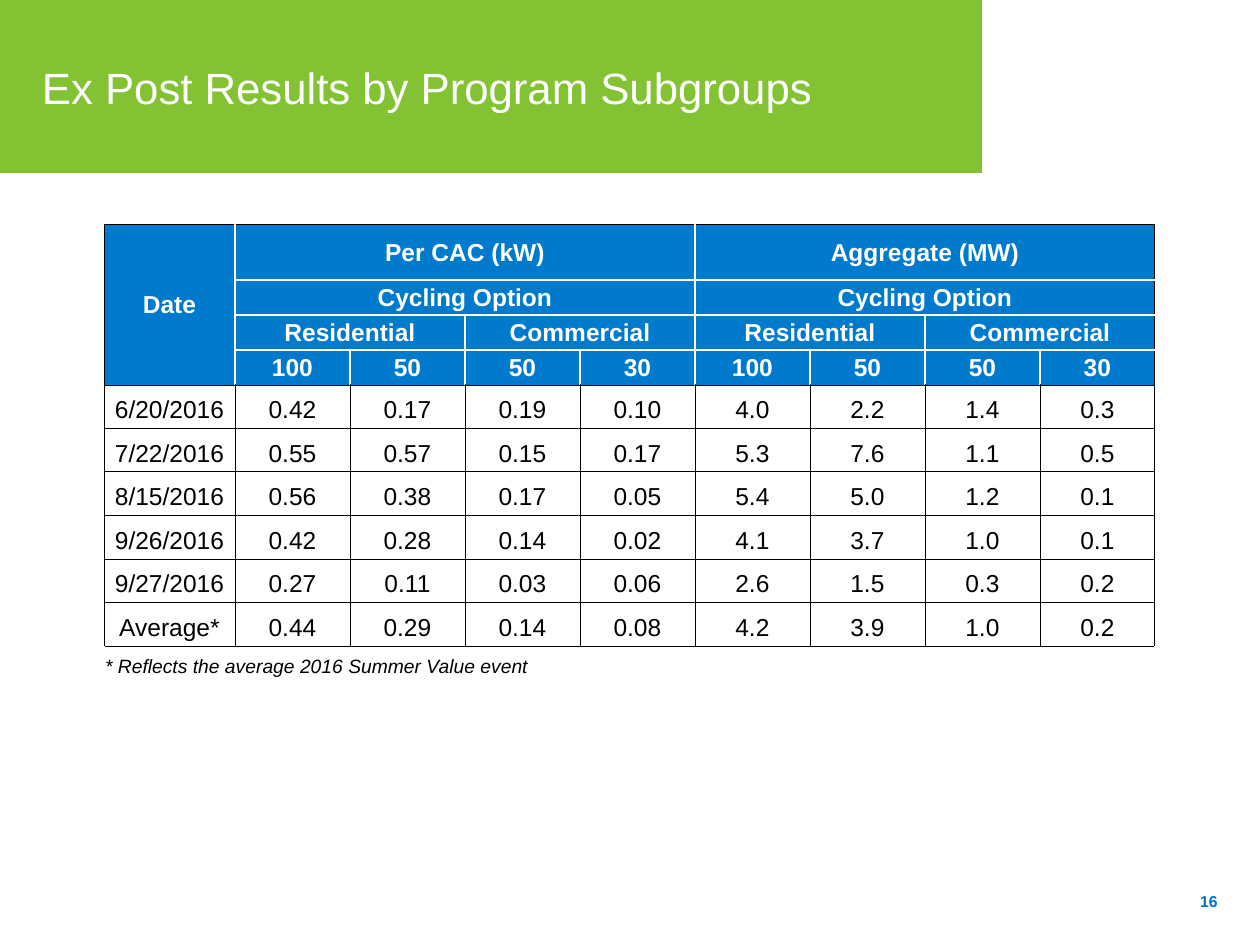
from lxml import etree
from pptx import Presentation
from pptx.dml.color import RGBColor
from pptx.enum.shapes import MSO_SHAPE
from pptx.enum.text import MSO_ANCHOR, PP_ALIGN
from pptx.oxml.ns import qn
from pptx.util import Pt

RECT = MSO_SHAPE.RECTANGLE
MIDDLE, BOTTOM = MSO_ANCHOR.MIDDLE, MSO_ANCHOR.BOTTOM
LEFT, CENTER, RIGHT = PP_ALIGN.LEFT, PP_ALIGN.CENTER, PP_ALIGN.RIGHT
WHITE = RGBColor(0xFF, 0xFF, 0xFF)
BLACK = RGBColor(0, 0, 0)
GREEN = RGBColor(0x77, 0xBC, 0x1F)
BLUE = RGBColor(0x00, 0x7A, 0xCD)
PAGE_BLUE = RGBColor(0x00, 0x70, 0xCD)
PX = 914400 / 126


def write(tf, text, align, color, **fmt):
    p = tf.paragraphs[0]
    p.alignment = align
    r = p.add_run()
    r.text = text
    r.font.color.rgb = color
    for name, value in {"name": "Arial", **fmt}.items():
        setattr(r.font, name, value)
    return p


def border(cell, **sides):
    tcPr = cell._tc.get_or_add_tcPr()
    for i, side in enumerate("LRTB"):
        if side in sides:
            color, width = sides[side]
            ln = etree.Element(qn("a:ln" + side), w=str(Pt(width)))
            fill = etree.SubElement(ln, qn("a:solidFill"))
            etree.SubElement(fill, qn("a:srgbClr"), val=str(color))
            tcPr.insert(i, ln)


prs = Presentation()
prs.slide_width, prs.slide_height = int(1260 * PX), int(945 * PX)
s = prs.slides.add_slide(prs.slide_layouts[6])

sp = s.shapes.add_shape(RECT, *[int(v * PX) for v in (-2, 0, 984, 173)])
sp.shadow.inherit = False
sp.fill.solid()
sp.fill.fore_color.rgb = GREEN
etree.SubElement(sp._element.spPr.find(".//" + qn("a:srgbClr")), qn("a:alpha"), val="91000")
sp.line.fill.background()
tf = sp.text_frame
tf.word_wrap = True
tf.vertical_anchor = MIDDLE
tf.margin_left, tf.margin_right = int(44 * PX), int(23 * PX)
write(tf, "Ex Post Results by Program Subgroups", LEFT, WHITE, size=Pt(25))

widths = [131] + [115] * 8
heights = [56, 35, 35, 35, 44, 43, 44, 44, 43, 44, 31]
box = [int(v * PX) for v in (104, 224, sum(widths), sum(heights))]
table = s.shapes.add_table(len(heights), len(widths), *box).table
for col, width in zip(table.columns, widths):
    col.width = int(width * PX)
for row, height in zip(table.rows, heights):
    row.height = int(height * PX)

headers = [
    (0, 1, 4, ["Per CAC (kW)", "Aggregate (MW)"]),
    (1, 1, 4, ["Cycling Option"] * 2),
    (2, 1, 2, ["Residential", "Commercial"] * 2),
    (3, 1, 1, ["100", "50", "50", "30"] * 2),
]
cells = [(0, 0, 4, 1, "Date")]
for row, first, span, labels in headers:
    cells += [(row, first + i * span, 1, span, text) for i, text in enumerate(labels)]
data = [
    ["6/20/2016", "0.42", "0.17", "0.19", "0.10", "4.0", "2.2", "1.4", "0.3"],
    ["7/22/2016", "0.55", "0.57", "0.15", "0.17", "5.3", "7.6", "1.1", "0.5"],
    ["8/15/2016", "0.56", "0.38", "0.17", "0.05", "5.4", "5.0", "1.2", "0.1"],
    ["9/26/2016", "0.42", "0.28", "0.14", "0.02", "4.1", "3.7", "1.0", "0.1"],
    ["9/27/2016", "0.27", "0.11", "0.03", "0.06", "2.6", "1.5", "0.3", "0.2"],
    ["Average*", "0.44", "0.29", "0.14", "0.08", "4.2", "3.9", "1.0", "0.2"],
]
for row, values in enumerate(data, 4):
    cells += [(row, col, 1, 1, text) for col, text in enumerate(values)]
cells.append((10, 0, 1, 9, "* Reflects the average 2016 Summer Value event"))

thin, light = (BLACK, 0.5), (WHITE, 1)
for row, col, rowspan, colspan, text in cells:
    cell = table.cell(row, col)
    header, note = row < 4, row == 10
    last_row, last_col = row + rowspan - 1, col + colspan - 1
    if rowspan * colspan > 1:
        cell.merge(table.cell(last_row, last_col))
    cell.margin_left = cell.margin_right = cell.margin_top = int(PX)
    cell.margin_bottom = 0
    cell.vertical_anchor = BOTTOM if note else MIDDLE
    p = write(cell.text_frame, text, LEFT if note else CENTER, WHITE if header else BLACK,
              size=Pt(11 if note else 14), bold=header, italic=note)
    if not header and not note:
        p.line_spacing = 1.2
    sides = {"T": thin} if note else dict.fromkeys("LRTB", thin)
    if header:
        sides = {
            "L": light if col else thin,
            "R": light if last_col < 8 else thin,
            "T": light if row else thin,
            "B": light if last_row < 3 else thin,
        }
    for r in range(row, last_row + 1):
        for c in range(col, last_col + 1):
            part = table.cell(r, c)
            if header:
                part.fill.solid()
                part.fill.fore_color.rgb = BLUE
            else:
                part.fill.background()
            border(part, **sides)

tf = s.shapes.add_textbox(*[int(v * PX) for v in (1142, 876, 88, 50)]).text_frame
tf.word_wrap = True
tf.vertical_anchor = MIDDLE
write(tf, "16", RIGHT, PAGE_BLUE, size=Pt(9), bold=True)

prs.save("out.pptx")
